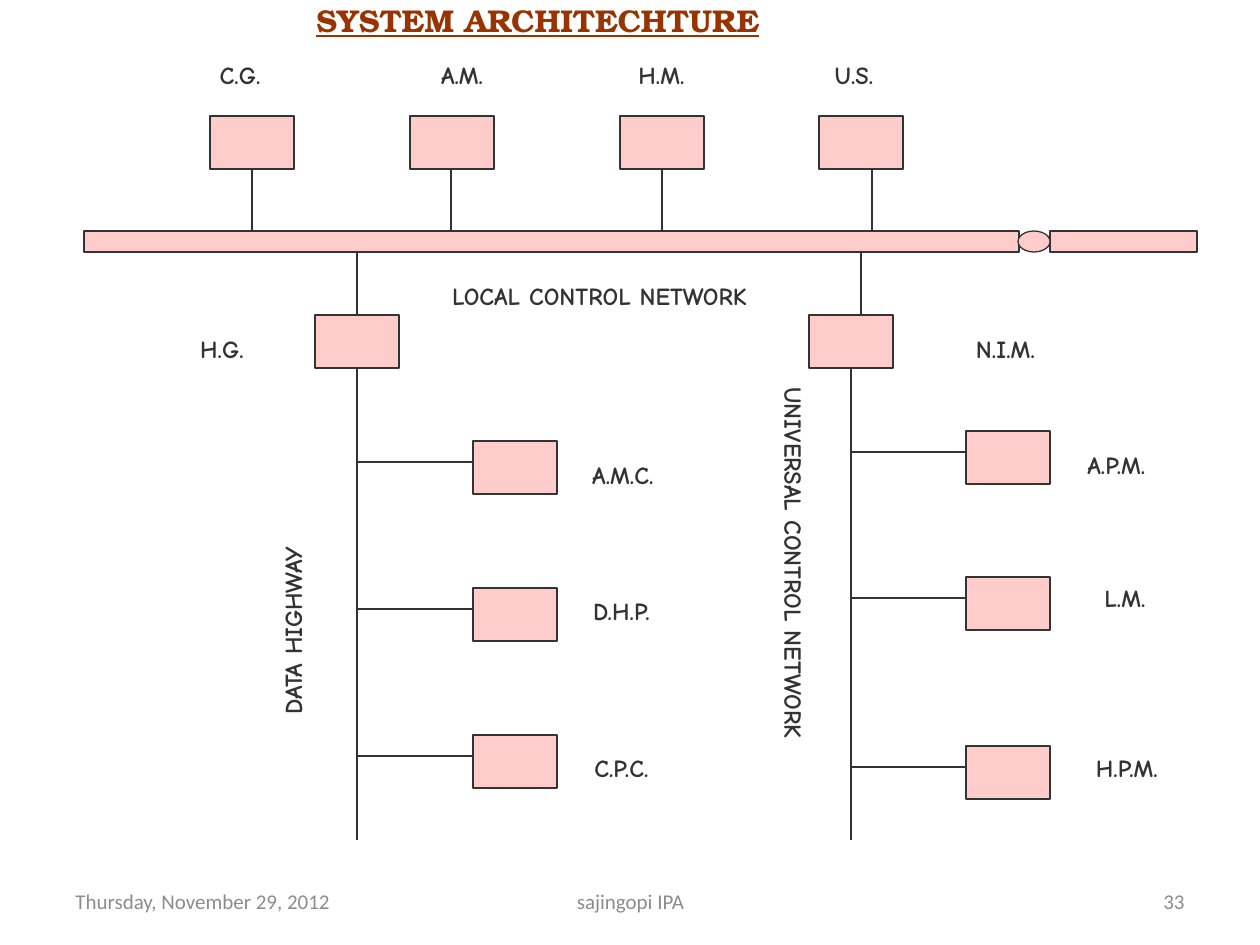
from pptx import Presentation
from pptx.dml.color import RGBColor
from pptx.enum.shapes import MSO_CONNECTOR, MSO_SHAPE
from pptx.enum.text import MSO_ANCHOR, MSO_AUTO_SIZE, PP_ALIGN
from pptx.oxml.ns import qn
from pptx.util import Pt
from lxml import etree

EMU_PER_PX = 914400 / 126


def px(n):
    """Convert whole pixels to EMU."""
    return round(n * EMU_PER_PX)


def rgb(value):
    """Turn a hex string into a colour."""
    return RGBColor.from_string(value)


class Diagram:
    """Hold the style and the current slide."""

    FILL, INK = "FFCCCC", "333333"
    BOX_W, BOX_H = 84, 53
    LABEL = {"size": Pt(14), "name": "Comic Neue", "bold": True}
    TITLE = {"size": Pt(18), "name": "TeX Gyre Bonum", "bold": True, "underline": True}
    FOOTER = {"size": Pt(12), "name": "Calibri", "bold": False}

    def __init__(self, prs):
        """Start a title-only slide."""
        self.s = prs.slides.add_slide(prs.slide_layouts[5])

    def set_text(self, sp, text, style, color, align, anchor, wrap):
        """Put one formatted line into a shape."""
        tf = sp.text_frame
        frame = {"word_wrap": wrap, "vertical_anchor": anchor, "auto_size": MSO_AUTO_SIZE.NONE}
        for key, value in frame.items():
            setattr(tf, key, value)
        p = tf.paragraphs[0]
        p.alignment = align
        r = p.add_run()
        r.text = text
        for key, value in style.items():
            setattr(r.font, key, value)
        r.font.color.rgb = rgb(color)

    def title(self, text, x, y, w, h):
        """Move and fill the title placeholder."""
        sp = self.s.shapes.title
        sp.left, sp.top, sp.width, sp.height = map(px, (x, y, w, h))
        self.set_text(sp, text, self.TITLE, "993300", PP_ALIGN.CENTER, MSO_ANCHOR.TOP, False)

    def label(self, text, x, y, w, h=43, rotation=0, vert=None):
        """Add a centred label."""
        sp = self.s.shapes.add_textbox(*map(px, (x, y, w, h)))
        sp.rotation = rotation
        self.set_text(sp, text, self.LABEL, self.INK, PP_ALIGN.CENTER, MSO_ANCHOR.TOP, False)
        if vert:
            sp.text_frame._txBody.bodyPr.set("vert", vert)

    def footer(self, text, x, w, align):
        """Add a grey footer field."""
        sp = self.s.shapes.add_textbox(*map(px, (x, 876, w, 50)))
        self.set_text(sp, text, self.FOOTER, "8C8C8C", align, MSO_ANCHOR.MIDDLE, True)

    def shape(self, x, y, w=BOX_W, h=BOX_H, kind=MSO_SHAPE.RECTANGLE):
        """Add a filled, outlined shape."""
        sp = self.s.shapes.add_shape(kind, *map(px, (x, y, w, h)))
        sp.shadow.inherit = False
        sp.fill.solid()
        sp.fill.fore_color.rgb = rgb(self.FILL)
        sp.line.color.rgb = rgb(self.INK)
        sp.line.width = Pt(0.75)

    def line(self, x1, y1, x2, y2):
        """Add a straight line without shadow."""
        c = self.s.shapes.add_connector(MSO_CONNECTOR.STRAIGHT, *map(px, (x1, y1, x2, y2)))
        c.line.color.rgb = rgb(self.INK)
        c.line.width = Pt(0.75)
        etree.SubElement(c._element.spPr, qn("a:effectLst"))


def main():
    """Build the system architecture slide."""
    prs = Presentation()
    prs.slide_width, prs.slide_height = px(1260), px(945)
    d = Diagram(prs)
    d.title("SYSTEM ARCHITECHTURE", 301, -5, 474, 52)

    bus_top, bus_h = 231, 21
    bus_bottom = bus_top + bus_h
    d.shape(84, bus_top, 935, bus_h)
    d.shape(1050, bus_top, 147, bus_h)
    d.shape(1018, bus_top, 32, bus_h, MSO_SHAPE.OVAL)

    stations = [
        ("C.G. ", 210, 252, 200, 89),
        ("A.M. ", 410, 451, 418, 97),
        ("H.M. ", 620, 662, 617, 98),
        ("U.S.", 819, 872, 813, 82),
    ]
    for text, x, drop, label_x, label_w in stations:
        d.shape(x, 116)
        d.line(drop, 168, drop, bus_top)
        d.label(text, label_x, 54, label_w)

    gateways = [
        ("H.G.", 315, 357, 357, 181, 82, 473, [
            ("A.M.C.", 441, 567, 454, 112),
            ("D.H.P.", 588, 568, 590, 107),
            ("C.P.C.", 735, 571, 747, 101),
        ]),
        ("N.I.M.", 809, 861, 851, 949, 113, 966, [
            ("A.P.M.", 431, 1061, 444, 111),
            ("L.M.", 577, 1084, 577, 82),
            ("H.P.M.", 746, 1071, 747, 112),
        ]),
    ]
    for text, x, drop, trunk, label_x, label_w, node_x, nodes in gateways:
        d.shape(x, 315)
        d.line(drop, bus_bottom, drop, 315)
        d.line(trunk, 368, trunk, 840)
        d.label(text, label_x, 328, label_w)
        for node, y, node_label_x, node_label_y, node_label_w in nodes:
            d.shape(node_x, y)
            d.line(trunk, y + 21, node_x, y + 21)
            d.label(node, node_label_x, node_label_y, node_label_w)

    d.label("LOCAL CONTROL NETWORK ", 410, 275, 388)
    d.label("DATA HIGHWAY ", 170, 605, 246, rotation=270)
    d.label("UNIVERSAL CONTROL NETWORK ", 761, 375, 54, 445, vert="eaVert")

    d.footer("Thursday, November 29, 2012", 63, 294, PP_ALIGN.LEFT)
    d.footer("sajingopi IPA", 431, 399, PP_ALIGN.CENTER)
    d.footer("33", 903, 294, PP_ALIGN.RIGHT)
    prs.save("out.pptx")


if __name__ == "__main__":
    main()
